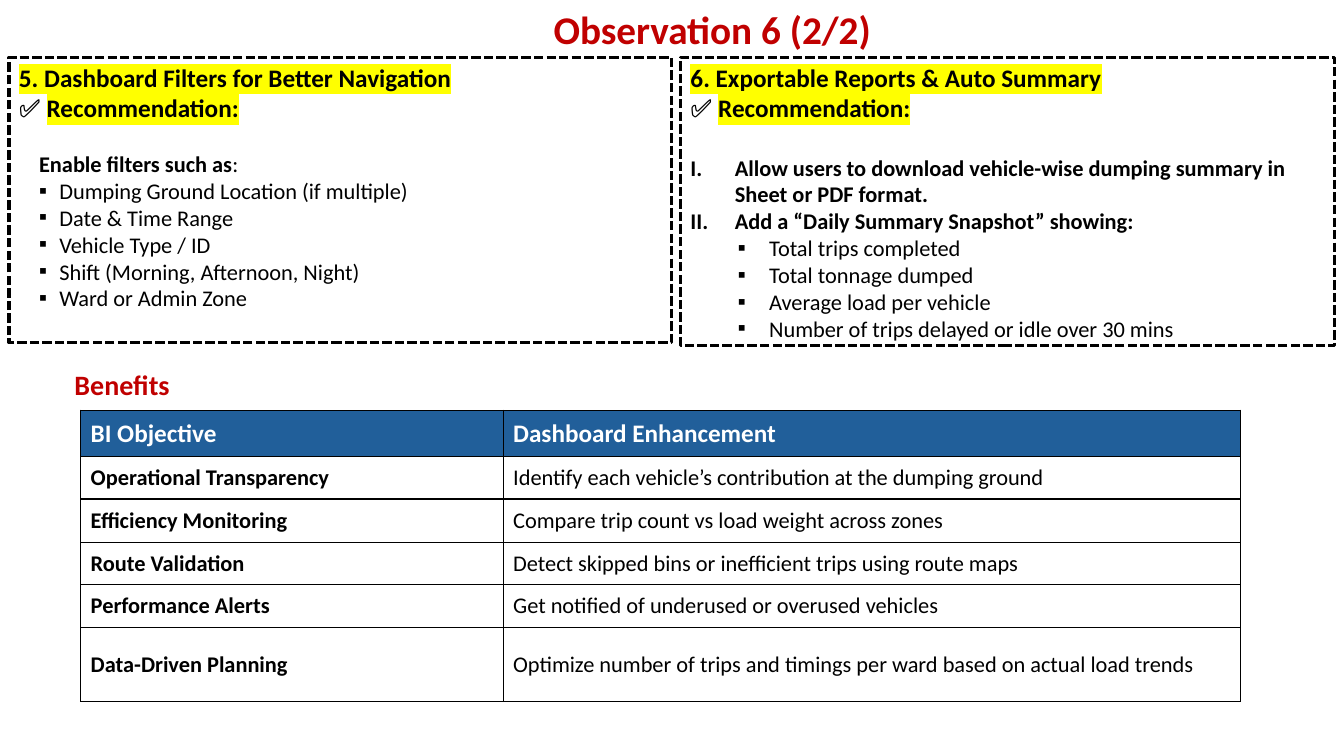
from lxml import etree
from pptx import Presentation
from pptx import util as u
from pptx.dml.color import RGBColor
from pptx.enum import dml, shapes, text
from pptx.oxml.ns import qn

BLACK, WHITE, RED, BLUE, YELLOW = "000000", "FFFFFF", "C00000", "215F9A", "FFFF00"
SQUARE = ("a:buChar", {"char": "▪"})
ROMAN = ("a:buAutoNum", {"type": "romanUcPeriod"})


def px(n):
    """Convert px (100 to the inch) to EMU."""
    return u.Emu(n * 9144)


def rgb(value):
    return RGBColor.from_string(value)


def add_xml(parent, tag, **attrs):
    return etree.SubElement(parent, qn(tag), attrs)


class SlideBuilder:
    font = "Calibri"

    def __init__(self, prs):
        self.slide = prs.slides.add_slide(prs.slide_layouts[5])

    def style(self, font, size, color=BLACK, bold=False):
        font.name, font.size, font.bold = self.font, u.Pt(size), bold
        font.color.rgb = rgb(color)

    def highlight(self, r):
        mark = add_xml(r.font._element, "a:highlight")
        add_xml(mark, "a:srgbClr", val=YELLOW)

    def heading(self, sp, words, size, box):
        """Place a one-line red heading in a title or text box."""
        sp.left, sp.top, sp.width, sp.height = map(px, box)
        tf = sp.text_frame
        tf.word_wrap, tf.auto_size = False, text.MSO_AUTO_SIZE.NONE
        tf.vertical_anchor = text.MSO_ANCHOR.TOP
        p = tf.paragraphs[0]
        p.text, p.alignment = words, text.PP_ALIGN.LEFT
        self.style(p.font, size, RED, True)

    def title(self, words, box):
        self.heading(self.slide.shapes.title, words, 28, box)

    def subtitle(self, words, box):
        self.heading(self.slide.shapes.add_textbox(0, 0, 0, 0), words, 20, box)

    def panel(self, box, name, gap, items):
        """Draw a dashed box; items are (words, bold, bullet, margin, indent)."""
        sp = self.slide.shapes.add_shape(shapes.MSO_SHAPE.RECTANGLE, *map(px, box))
        sp.shadow.inherit = False
        sp.fill.background()
        sp.line.color.rgb, sp.line.width = rgb(BLACK), u.Pt(2.25)
        sp.line.dash_style = dml.MSO_LINE.SQUARE_DOT
        sp.line._ln.find(qn("a:prstDash")).set("val", "sysDash")
        tf = sp.text_frame
        tf.word_wrap, tf.vertical_anchor = True, text.MSO_ANCHOR.TOP

        p = tf.paragraphs[0]
        p.alignment = text.PP_ALIGN.LEFT
        self.style(p.font, 18, bold=True)
        self.highlight(self.run(p, name))
        p = self.paragraph(tf, 18, True)
        self.run(p, "✅ ")
        self.highlight(self.run(p, "Recommendation:"))

        for i, (words, bold, bullet, margin, indent) in enumerate(items):
            p = self.paragraph(tf, 16, bold, bullet, margin, indent)
            if i == 0:
                p.space_before = u.Pt(gap)
            lead, colon, _ = words.partition("|:")
            self.run(p, lead)
            if colon:
                self.run(p, ":").font.bold = False

    def run(self, p, words):
        r = p.add_run()
        r.text = words
        return r

    def paragraph(self, tf, size, bold, bullet=None, margin=0, indent=0):
        p = tf.add_paragraph()
        pPr = p._p.get_or_add_pPr()
        pPr.set("marL", str(px(margin)))
        pPr.set("indent", str(px(indent)))
        if bullet:
            tag, attrs = bullet
            add_xml(add_xml(pPr, "a:buClr"), "a:srgbClr", val=BLACK)
            add_xml(pPr, "a:buFont", typeface=self.font)
            add_xml(pPr, tag, **attrs)
        p.alignment = text.PP_ALIGN.LEFT
        self.style(p.font, size, bold=bold)
        return p

    def table(self, left, top, widths, heights, rows):
        frame = self.slide.shapes.add_table(
            len(rows), len(widths), px(left), px(top), px(sum(widths)), px(sum(heights)))
        table = frame.table
        table.first_row = table.horz_banding = False
        for column, width in zip(table.columns, widths):
            column.width = px(width)
        for i, (row, height, values) in enumerate(zip(table.rows, heights, rows)):
            row.height = px(height)
            for j, (cell, value) in enumerate(zip(row.cells, values)):
                self.cell(cell, value, header=i == 0, bold=i == 0 or j == 0)

    def cell(self, cell, words, header, bold):
        tcPr = cell._tc.get_or_add_tcPr()
        for side in "LRTB":
            ln = add_xml(tcPr, f"a:ln{side}", w=str(u.Pt(0.96)))
            add_xml(add_xml(ln, "a:solidFill"), "a:srgbClr", val=BLACK)
        if header:
            cell.fill.solid()
            cell.fill.fore_color.rgb = rgb(BLUE)
        else:
            cell.fill.background()
        cell.vertical_anchor = text.MSO_ANCHOR.MIDDLE
        p = cell.text_frame.paragraphs[0]
        p.text = words
        self.style(p.font, 18 if header else 16, WHITE if header else BLACK, bold)


def main():
    prs = Presentation()
    prs.slide_width, prs.slide_height = px(1333), px(750)
    s = SlideBuilder(prs)
    s.title("Observation 6 (2/2)", (539, 0, 444, 56))

    filters = ["Dumping Ground Location (if multiple)", "Date & Time Range",
               "Vehicle Type / ID", "Shift (Morning, Afternoon, Night)",
               "Ward or Admin Zone"]
    s.panel((9, 57, 657, 283), "5. Dashboard Filters for Better Navigation", 19.5,
            [("Enable filters such as|:", True, None, 20, 0)]
            + [(f, False, SQUARE, 40, -20) for f in filters])

    reports = ["Allow users to download vehicle-wise dumping summary in Sheet or PDF format.",
               "Add a “Daily Summary Snapshot” showing:"]
    snapshot = ["Total trips completed", "Total tonnage dumped", "Average load per vehicle",
                "Number of trips delayed or idle over 30 mins"]
    s.panel((675, 57, 649, 286), "6. Exportable Reports & Auto Summary", 22,
            [(r, True, ROMAN, 44, -44) for r in reports]
            + [(n, False, SQUARE, 78, -31) for n in snapshot])

    s.table(80, 407, [419, 731], [46] + [42, 43] * 2 + [73], [
        ("BI Objective", "Dashboard Enhancement"),
        ("Operational Transparency",
         "Identify each vehicle’s contribution at the dumping ground"),
        ("Efficiency Monitoring", "Compare trip count vs load weight across zones"),
        ("Route Validation", "Detect skipped bins or inefficient trips using route maps"),
        ("Performance Alerts", "Get notified of underused or overused vehicles"),
        ("Data-Driven Planning",
         "Optimize number of trips and timings per ward based on actual load trends"),
    ])
    s.subtitle("Benefits", (64, 360, 149, 43))
    prs.save("out.pptx")


if __name__ == "__main__":
    main()
